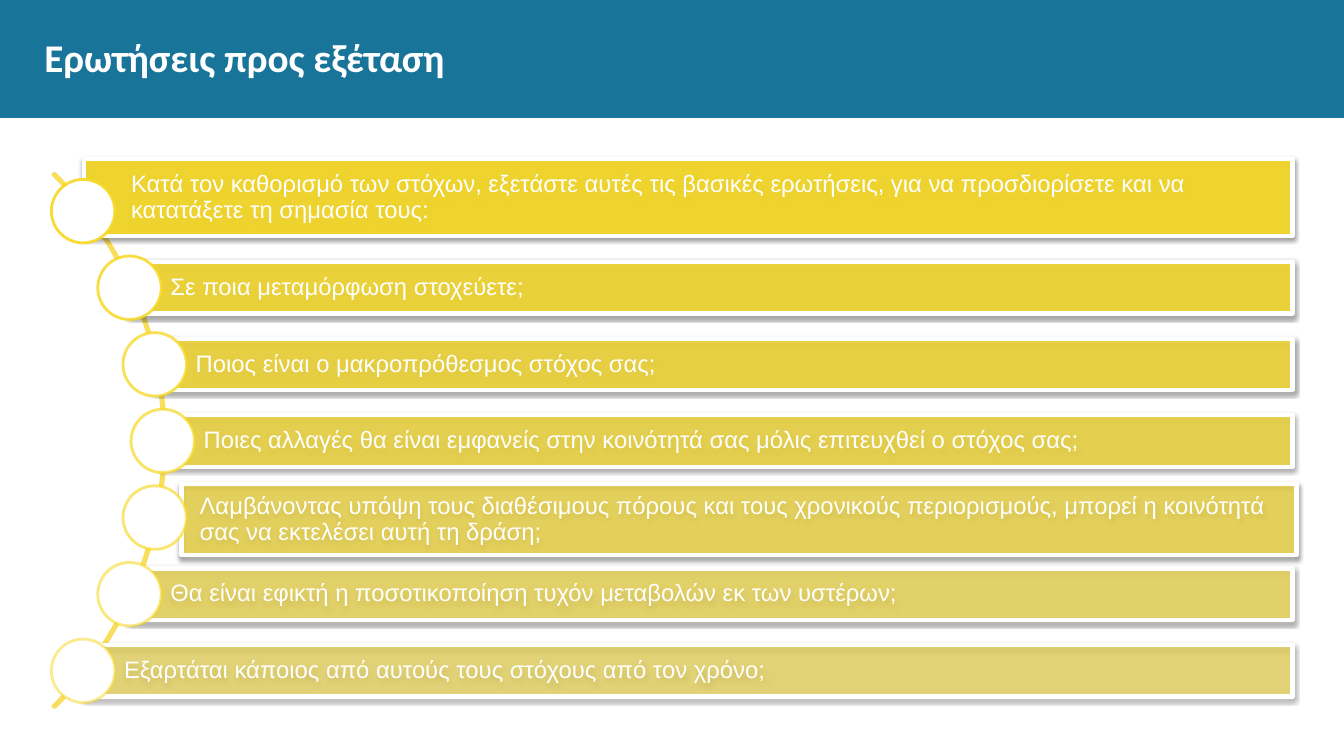
from dataclasses import dataclass

from lxml import etree
from pptx import Presentation
from pptx.dml.color import RGBColor
from pptx.enum.shapes import MSO_SHAPE
from pptx.enum.text import MSO_ANCHOR, PP_ALIGN
from pptx.oxml.ns import qn
from pptx.util import Pt

PX = 9144  # 100 px to the inch
RECTANGLE = MSO_SHAPE.RECTANGLE
OVAL = MSO_SHAPE.OVAL
BLOCK_ARC = MSO_SHAPE.BLOCK_ARC
MIDDLE = MSO_ANCHOR.MIDDLE
LEFT = PP_ALIGN.LEFT

COLORS = {
    "header": "187498",
    "white": "FFFFFF",
    "yellow": "F7D822",
    "arc": "F9DD5C",
    "shadow": "000000",
}

CIRCLE = 63
ROW_STEP = 76
BAR_HEIGHT = 51
BAR_RIGHT = 1282


@dataclass
class Question:
    text: str
    center: int
    bar: tuple = None  # left, top, width, height where the bar leaves the rule
    inset: int = 40


QUESTIONS = [
    Question("Κατά τον καθορισμό των στόχων, εξετάστε αυτές τις βασικές ερωτήσεις, "
             "για να προσδιορίσετε και να κατατάξετε τη σημασία τους:",
             83, (83, 158, 1199, 76), 47),
    Question("Σε ποια μεταμόρφωση στοχεύετε;", 129),
    Question("Ποιος είναι ο μακροπρόθεσμος στόχος σας;", 154),
    Question("Ποιες αλλαγές θα είναι εμφανείς στην κοινότητά σας μόλις επιτευχθεί "
             "ο στόχος σας;", 162),
    Question("Λαμβάνοντας υπόψη τους διαθέσιμους πόρους και τους χρονικούς "
             "περιορισμούς, μπορεί η κοινότητά σας να εκτελέσει αυτή τη δράση;",
             154, (180, 480, 1106, 71), 18),
    Question("Θα είναι εφικτή η ποσοτικοποίηση τυχόν μεταβολών εκ των υστέρων;", 129),
    Question("Εξαρτάται κάποιος από αυτούς τους στόχους από τον χρόνο;", 83),
]


def rgb(name):
    return RGBColor.from_string(COLORS[name])


def add_shape(page, kind, box, fill=None, line=None, width=0):
    shape = page.shapes.add_shape(kind, *(length * PX for length in box))
    shape.shadow.inherit = False
    if fill:
        shape.fill.solid()
        shape.fill.fore_color.rgb = rgb(fill)
    else:
        shape.fill.background()
    if line:
        shape.line.color.rgb = rgb(line)
        shape.line.width = Pt(width)
    else:
        shape.line.fill.background()
    return shape


def set_alpha(parent, percent):
    """Set the opacity of the first colour found below an XML element."""
    color = next(parent.iter(qn("a:srgbClr")))
    etree.SubElement(color, qn("a:alpha"), val=str(round(percent * 1000)))


def add_soft_shadow(shape):
    effects = shape._element.spPr.find(qn("a:effectLst"))
    shadow = etree.SubElement(effects, qn("a:outerShdw"), blurRad="40000",
                              dist="20000", dir="5400000", rotWithShape="0")
    etree.SubElement(shadow, qn("a:srgbClr"), val=COLORS["shadow"])
    set_alpha(shadow, 38)


def write(shape, text, font, size, insets, bold=False, spacing=1.0):
    frame = shape.text_frame
    frame.word_wrap = True
    frame.vertical_anchor = MIDDLE
    (frame.margin_left, frame.margin_top,
     frame.margin_right, frame.margin_bottom) = (inset * PX for inset in insets)
    para = frame.paragraphs[0]
    para.text = text
    para.alignment = LEFT
    para.line_spacing = spacing
    para.font.name = font
    para.font.size = Pt(size)
    para.font.bold = bold
    para.font.color.rgb = rgb("white")


def add_header(page, box):
    left, top, width, height = box
    add_shape(page, RECTANGLE, box, "header")
    title = page.shapes.add_textbox((left + 44) * PX, (top + 19) * PX,
                                    (width - 87) * PX, (height - 43) * PX)
    write(title, "Ερωτήσεις προς εξέταση", "Calibri", 28, (0, 0, 0, 0), bold=True)


def add_question(page, question, middle, opacity):
    """Draw a bar with its question and the circle at its left end."""
    box = question.bar or (question.center, middle - BAR_HEIGHT // 2,
                           BAR_RIGHT - question.center, BAR_HEIGHT)
    bar = add_shape(page, RECTANGLE, box, "yellow", "white", 3)
    set_alpha(bar._element.spPr.find(qn("a:solidFill")), opacity)
    add_soft_shadow(bar)
    write(bar, question.text, "Arial", 17, (question.inset, 5, 5, 5), spacing=0.9)

    radius = CIRCLE // 2
    circle = add_shape(page, OVAL, (question.center - radius - 1, middle - radius,
                                    CIRCLE, CIRCLE), "white", "yellow", 2)
    set_alpha(circle._element.spPr.find(qn("a:ln")), opacity)


def add_question_list(page, box):
    left, top, width, height = box
    arc = add_shape(page, BLOCK_ARC, (left - 637, top - 96, 750, 750),
                    line="arc", width=2)
    for index, value in enumerate((189, 27, 0.003)):
        arc.adjustments[index] = value
    for index, question in enumerate(QUESTIONS):
        middle = top + height // 2 + (index - len(QUESTIONS) // 2) * ROW_STEP
        opacity = 90 - 40 * index / (len(QUESTIONS) - 1)
        add_question(page, question, middle, opacity)


def main():
    deck = Presentation()
    deck.slide_width = 1333 * PX
    deck.slide_height = 750 * PX
    page = deck.slides.add_slide(deck.slide_layouts[6])
    add_header(page, (0, 0, 1333, 117))
    add_question_list(page, (51, 158, 1235, 558))
    deck.save("out.pptx")


if __name__ == "__main__":
    main()
